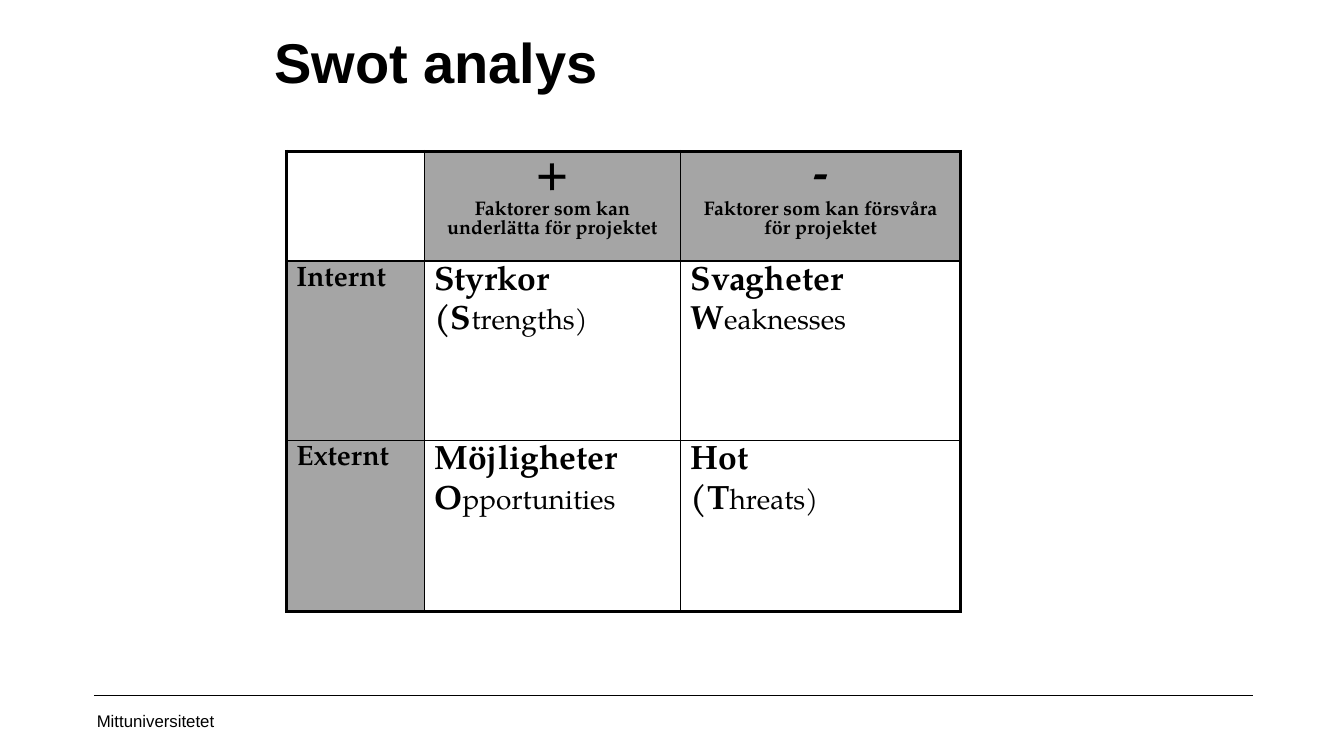
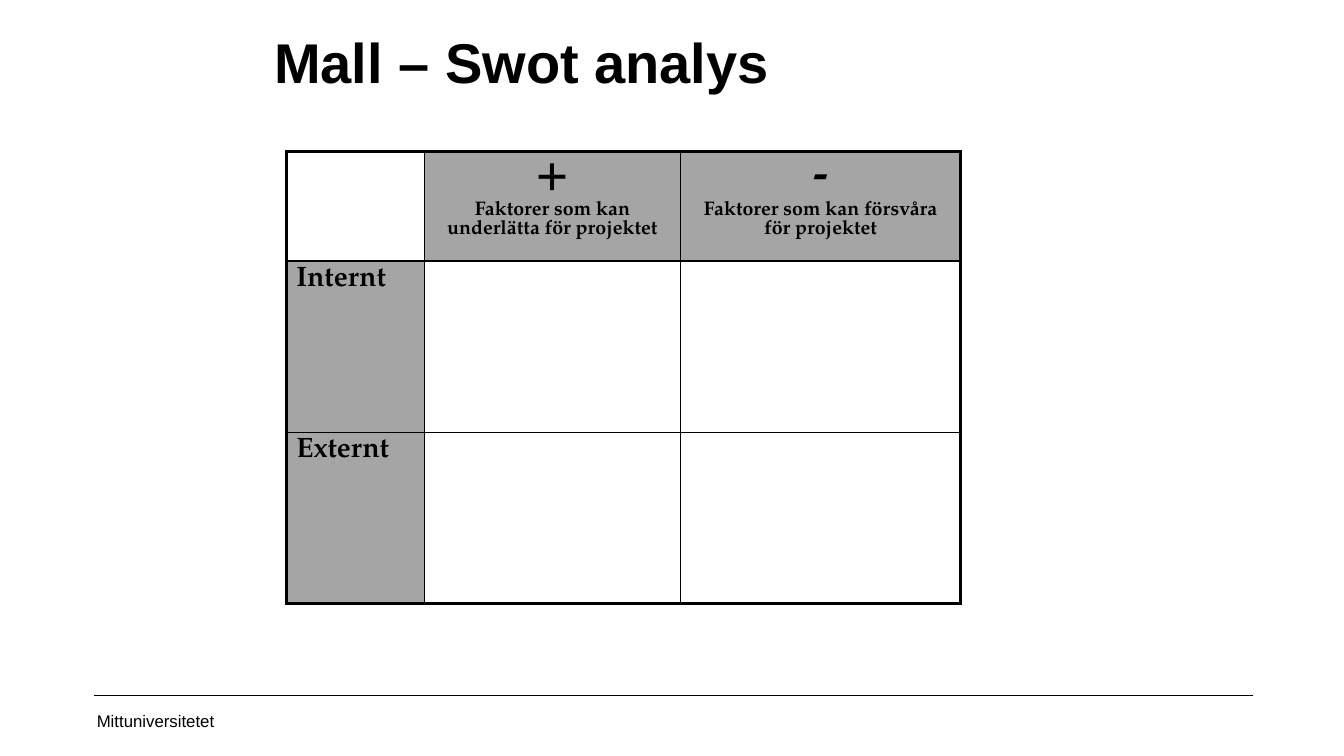
"""Build two SWOT analysis slides: one explained and one blank template."""
from lxml import etree
from pptx import Presentation
from pptx import util as u
from pptx.dml.color import RGBColor
from pptx.enum import shapes, text
from pptx.oxml.ns import qn

PX = 9144
COLORS = {"ink": "000000", "label": "A5A5A5"}
SANS, SERIF = "Arial", "TeX Gyre Pagella"
COLUMNS = (137, 254, 278)
THICK, THIN = 2.25, 1
TOP, MIDDLE = text.MSO_ANCHOR.TOP, text.MSO_ANCHOR.MIDDLE
LEFT, CENTER = text.PP_ALIGN.LEFT, text.PP_ALIGN.CENTER

HEADINGS = (
    ("+", "Faktorer som kan underlätta för projektet"),
    ("-", "Faktorer som kan försvåra för projektet"),
)
FACTORS = ("Internt", "Externt")
QUADRANTS = (
    (("Styrkor", "(S", "trengths)"), ("Svagheter", "W", "eaknesses")),
    (("Möjligheter", "O", "pportunities"), ("Hot", "(T", "hreats)")),
)


def px(*lengths):
    return [u.Emu(length * PX) for length in lengths]


def color(name):
    return RGBColor.from_string(COLORS[name])


def write(frame, paragraphs, font=SERIF, align=LEFT, anchor=TOP,
          insets=(10, 5, 10, 5), spacing=None):
    """Fill a frame with paragraphs, each a list of (text, size, bold) runs."""
    frame.word_wrap = True
    frame.vertical_anchor = anchor
    (frame.margin_left, frame.margin_top,
     frame.margin_right, frame.margin_bottom) = px(*insets)
    for index, runs in enumerate(paragraphs):
        paragraph = frame.add_paragraph() if index else frame.paragraphs[0]
        paragraph.alignment = align
        paragraph.space_before = u.Pt(0.2 * runs[0][1] if index else 0)
        if spacing:
            paragraph.line_spacing = spacing
        for words, size, bold in runs:
            run = paragraph.add_run()
            run.text = words
            run.font.name = font
            run.font.size = u.Pt(size)
            run.font.bold = bold
            run.font.color.rgb = color("ink")


def add_title(slide, words):
    title = slide.shapes.title
    title.left, title.top, title.width, title.height = px(262, 39, 842, 125)
    title.text_frame.auto_size = text.MSO_AUTO_SIZE.NONE
    write(title.text_frame, [[(words, 40, True)]], font=SANS,
          spacing=u.Pt(36))


def add_footer(slide):
    rule = slide.shapes.add_connector(
        shapes.MSO_CONNECTOR.STRAIGHT, *px(93, 690, 1243, 690))
    rule.line.color.rgb = color("ink")
    rule.line.width = u.Pt(0.25)
    etree.SubElement(rule._element.spPr, qn("a:effectLst"))
    university = slide.shapes.add_textbox(*px(92, 695, 300, 40))
    write(university.text_frame, [[("Mittuniversitetet", 12, False)]],
          font=SANS, anchor=MIDDLE, insets=(4, 5, 10, 5))


def set_borders(cell, **widths):
    properties = cell._tc.get_or_add_tcPr()
    for side, width in widths.items():
        line = etree.SubElement(properties, qn(f"a:ln{side}"),
                                w=str(u.Pt(width)))
        fill = etree.SubElement(line, qn("a:solidFill"))
        etree.SubElement(fill, qn("a:srgbClr"), val=COLORS["ink"])


def cell_text(row, column, explained):
    """Return the paragraphs that belong in one cell of the matrix."""
    if row == column == 0:
        return []
    if row == 0:
        sign, meaning = HEADINGS[column - 1]
        return [[(sign, 32, True)], [(meaning, 14, True)]]
    if column == 0:
        return [[(FACTORS[row - 1], 20, True)]]
    if not explained:
        return []
    swedish, initial, rest = QUADRANTS[row - 1][column - 1]
    return [[(swedish, 24, True)], [(initial, 24, True), (rest, 20, False)]]


def add_matrix(slide, heights, explained):
    frame = slide.shapes.add_table(
        len(heights), len(COLUMNS),
        *px(284, 150, sum(COLUMNS), sum(heights)))
    matrix = frame.table
    matrix.first_row = matrix.horz_banding = False
    for column, width in zip(matrix.columns, px(*COLUMNS)):
        column.width = width
    for row, height in zip(matrix.rows, px(*heights)):
        row.height = height
    last_row, last_column = len(heights) - 1, len(COLUMNS) - 1
    for row in range(len(heights)):
        for column in range(len(COLUMNS)):
            cell = matrix.cell(row, column)
            set_borders(cell,
                        L=THIN if column else THICK,
                        R=THICK if column == last_column else THIN,
                        T=THIN if row else THICK,
                        B=THICK if row == last_row else THIN)
            if (row == 0) != (column == 0):
                cell.fill.solid()
                cell.fill.fore_color.rgb = color("label")
            else:
                cell.fill.background()
            cell.vertical_anchor = TOP
            (cell.margin_left, cell.margin_top,
             cell.margin_right, cell.margin_bottom) = px(10, 5, 10, 5)
            write(cell.text_frame, cell_text(row, column, explained),
                  align=LEFT if row else CENTER,
                  spacing=None if row else 0.95)


def main():
    deck = Presentation()
    deck.slide_width, deck.slide_height = u.Inches(13.33), u.Inches(7.5)
    for title, heights, explained in (
            ("Swot analys", (94, 178, 170), True),
            ("Mall – Swot analys", (94, 170, 170), False)):
        slide = deck.slides.add_slide(deck.slide_layouts[5])
        add_footer(slide)
        add_title(slide, title)
        add_matrix(slide, heights, explained)
    deck.save("out.pptx")


if __name__ == "__main__":
    main()
